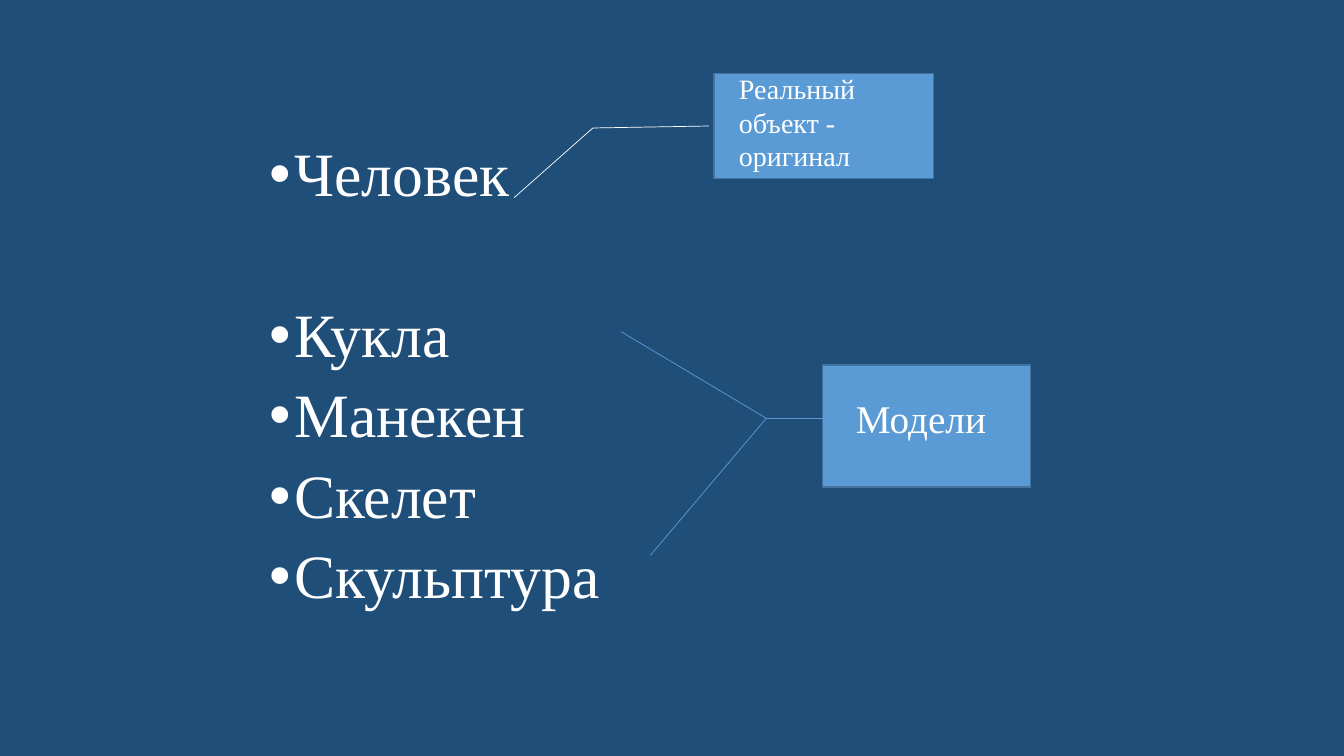
from pptx import Presentation
from pptx.dml.color import RGBColor
from pptx.enum.shapes import MSO_CONNECTOR as Conn, MSO_SHAPE as Shape
from pptx.enum.text import MSO_ANCHOR as Anchor, MSO_AUTO_SIZE as Fit, PP_ALIGN as Align
from pptx.oxml.ns import qn
from pptx.util import Inches, Pt
from lxml import etree

WHITE, NAVY, BLUE, EDGE = "FFFFFF", "1F4E79", "5B9BD5", "43739E"


def tint(code):
    return RGBColor.from_string(code)


def style(para, size):
    para.font.name = "Times New Roman"
    para.font.size = Pt(size)
    para.font.color.rgb = tint(WHITE)
    para.alignment = Align.LEFT


deck = Presentation()
deck.slide_width, deck.slide_height = Inches(13.33), Inches(7.5)
slide = deck.slides.add_slide(deck.slide_layouts[1])
slide.background.fill.solid()
slide.background.fill.fore_color.rgb = tint(NAVY)
title = slide.shapes.title
title.element.getparent().remove(title.element)

# Bulleted list: the person, then the models after a wide gap
body = slide.placeholders[1]
body.left, body.top = Inches(2.57), Inches(1.37)
body.width, body.height = Inches(11.5), Inches(4.76)
frame = body.text_frame
frame.auto_size = Fit.NONE
frame.vertical_anchor = Anchor.TOP
words = ["Человек", "Кукла", "Манекен", "Скелет", "Скульптура"]
frame.text = "\n".join(words)
for para in frame.paragraphs:
    style(para, 44)
    para.line_spacing = 0.9
    para.space_before = Pt(67.5 if para.text == "Кукла" else 10)
    props = para._p.get_or_add_pPr()
    props.set("marL", str(Inches(0.25)))
    props.set("indent", str(-Inches(0.25)))
    etree.SubElement(props, qn("a:buFont")).set("typeface", "Arial")
    etree.SubElement(props, qn("a:buChar")).set("char", "•")

# Boxes
for x, y, w, h in [(7.08, 0.73, 2.18, 1.04), (8.16, 3.62, 2.06, 1.21)]:
    box = slide.shapes.add_shape(Shape.RECTANGLE, Inches(x), Inches(y), Inches(w), Inches(h))
    box.shadow.inherit = False
    box.fill.solid()
    box.fill.fore_color.rgb = tint(BLUE)
    box.line.color.rgb = tint(EDGE)
    box.line.width = Pt(1)

# Lines from the list to the boxes
bend, fork = (5.88, 1.27), (7.6, 4.15)
lines = [
    ((5.1, 1.96), bend, WHITE),
    (bend, (7.03, 1.25), WHITE),
    ((6.16, 3.29), fork, BLUE),
    ((6.45, 5.51), fork, BLUE),
    (fork, (8.17, 4.15), BLUE),
]
for start, end, code in lines:
    line = slide.shapes.add_connector(Conn.STRAIGHT, *map(Inches, start + end))
    line.line.color.rgb = tint(code)
    line.line.width = Pt(0.5)
    etree.SubElement(line._element.spPr, qn("a:effectLst"))

# Labels over the boxes
labels = [
    ("Реальный объект - оригинал", 20, 7.23, 0.66, 2.08, 1.11),
    ("Модели", 28, 8.39, 3.86, 1.82, 0.57),
]
for text, size, x, y, w, h in labels:
    label = slide.shapes.add_textbox(Inches(x), Inches(y), Inches(w), Inches(h))
    label.text_frame.word_wrap = True
    label.text_frame.auto_size = Fit.SHAPE_TO_FIT_TEXT
    label.text_frame.text = text
    style(label.text_frame.paragraphs[0], size)

deck.save("out.pptx")
